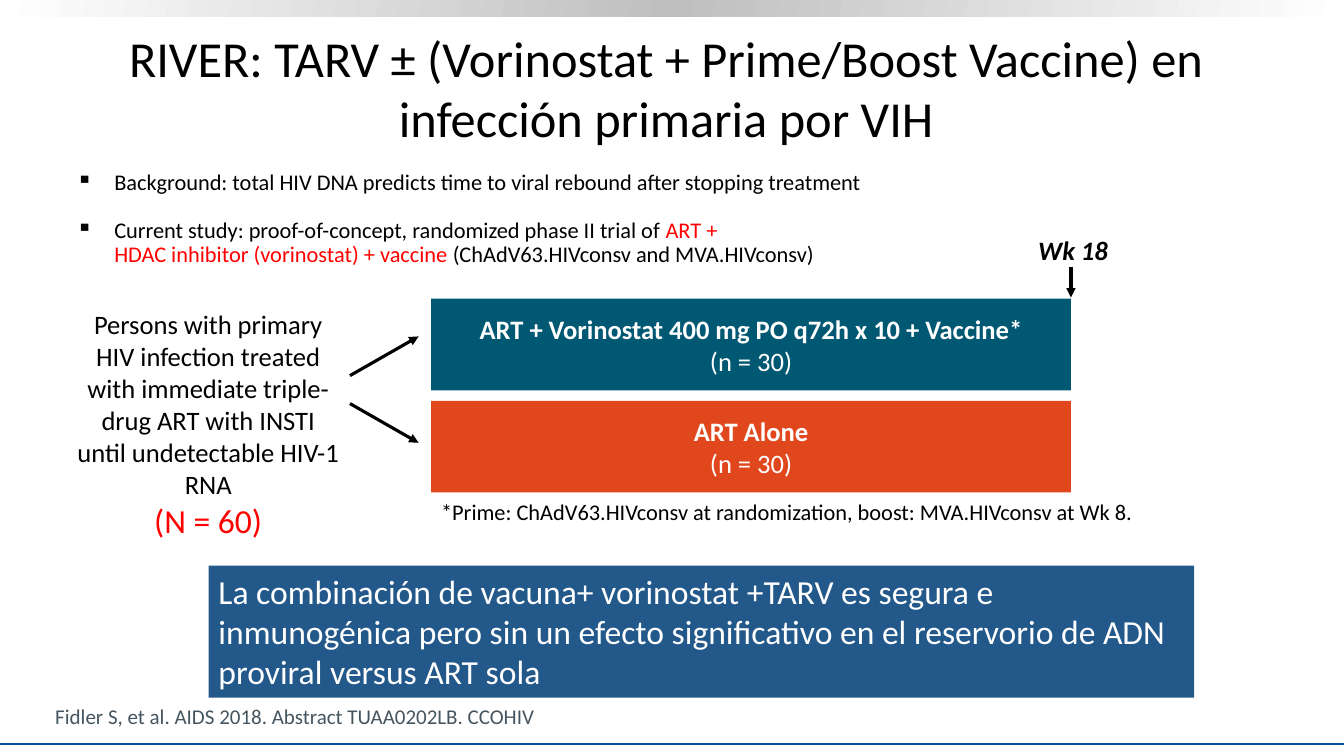
from copy import deepcopy

from lxml.etree import SubElement
from pptx import Presentation
from pptx.dml.color import RGBColor as Rgb
from pptx.enum.shapes import MSO_CONNECTOR as Conn, MSO_SHAPE as Geom
from pptx.enum.text import MSO_ANCHOR as Anchor, PP_ALIGN as Align
from pptx.oxml.ns import qn
from pptx.util import Pt

WIDE, HIGH = 960, 540
HEX = {
    "white": "FFFFFF", "black": "000000", "grey": "BFBFBF", "slate": "455560",
    "rule": "00539B", "teal": "015873", "orange": "E1471D", "blue": "22588A",
    "red": "FF0000",
}


class Deck:
    face = "Calibri"

    def __init__(self):
        self.prs = Presentation()
        self.prs.slide_width, self.prs.slide_height = Pt(WIDE), Pt(HIGH)
        self.slide = self.prs.slides.add_slide(self.prs.slide_layouts[6])

    def color(self, name):
        return Rgb.from_string(HEX[name])

    def rect(self, box, fill=None):
        shape = self.slide.shapes.add_shape(Geom.RECTANGLE, *map(Pt, box))
        shape.shadow.inherit = False
        shape.line.fill.background()
        if fill:
            shape.fill.solid()
            shape.fill.fore_color.rgb = self.color(fill)
        return shape

    def band(self, box, names, angle):
        """Draw a rectangle with a gradient of evenly spaced colours."""
        fill = self.rect(box).fill
        fill.gradient()
        fill.gradient_angle = angle
        stops = fill._fill._gradFill.find(qn("a:gsLst"))
        stops.append(deepcopy(stops[0]))
        for i, (stop, name) in enumerate(zip(fill.gradient_stops, names)):
            stop.position = i / (len(names) - 1)
            stop.color.rgb = self.color(name)

    def line(self, start, end, color="black", width=2.25, arrow=True):
        line = self.slide.shapes.add_connector(
            Conn.STRAIGHT, *map(Pt, start + end))
        line.line.color.rgb = self.color(color)
        line.line.width = Pt(width)
        if arrow:
            SubElement(line.line._get_or_add_ln(), qn("a:tailEnd"),
                       type="triangle")
        SubElement(line._element.spPr, qn("a:effectLst"))

    def text(self, box, paras, fill=None, anchor=Anchor.TOP, wrap=True):
        """Write paragraphs in a text box, or in a rectangle if filled."""
        if fill:
            shape = self.rect(box, fill)
        else:
            shape = self.slide.shapes.add_textbox(*map(Pt, box))
        frame = shape.text_frame
        frame.word_wrap, frame.vertical_anchor = wrap, anchor
        for i, para in enumerate(paras):
            item = frame.paragraphs[0] if i == 0 else frame.add_paragraph()
            self.para(item, **para)
        return frame

    def para(self, item, text, size, color="black", align=Align.LEFT,
             bold=False, italic=False):
        item.alignment = align
        self.font(item.font, size, color, bold, italic)
        if text:
            item.add_run().text = text

    def font(self, font, size, color, bold, italic):
        font.name, font.size = self.face, Pt(size)
        font.bold, font.italic = bold, italic
        font.color.rgb = self.color(color)

    def bullets(self, box, items, size):
        """Write items, each a list of (text, colour) runs; None is a break."""
        frame = self.slide.shapes.add_textbox(*map(Pt, box)).text_frame
        frame.word_wrap = True
        for i, runs in enumerate(items):
            para = frame.paragraphs[0] if i == 0 else frame.add_paragraph()
            para.line_spacing, para.space_after = 0.9, Pt(7)
            if i:
                para.space_before = Pt(10)
            props = para._p.get_or_add_pPr()
            props.set("marL", str(Pt(27)))
            props.set("indent", str(Pt(-27)))
            tint = SubElement(props, qn("a:buClr"))
            SubElement(tint, qn("a:srgbClr"), val=HEX["black"])
            SubElement(props, qn("a:buChar"), char="▪")
            self.para(para, "", size)
            for run in runs:
                if run is None:
                    para.add_line_break()
                    continue
                part = para.add_run()
                part.text = run[0]
                part.font.color.rgb = self.color(run[1])

    def save(self):
        self.prs.save("out.pptx")


def main():
    deck = Deck()
    mid = Align.CENTER

    deck.band((0, 0, WIDE, 11.5), ("white", "grey", "white"), 350)
    deck.line((0, 531.5), (WIDE, 531.5), "rule", 1.5, arrow=False)
    deck.text((48, 18.7, 856, 87), [dict(
        text="RIVER: TARV ± (Vorinostat + Prime/Boost Vaccine) en "
             "infección primaria por VIH", size=36, align=mid)],
        anchor=Anchor.MIDDLE)

    deck.bullets((47.5, 118.8, 857, 80), [
        [("Background: total HIV DNA predicts time to viral rebound "
          "after stopping treatment", "black")],
        [("Current study: proof-of-concept, randomized phase II trial of ",
          "black"),
         ("ART + ", "red"), None,
         ("HDAC inhibitor (vorinostat) + vaccine ", "red"),
         ("(ChAdV63.HIVconsv and MVA.HIVconsv)", "black")],
    ], 16)

    deck.text((47.5, 216.7, 202.5, 174), [
        dict(text="Persons with primary HIV infection treated with immediate "
                  "triple-drug ART with INSTI until undetectable HIV-1 RNA",
             size=19, align=mid),
        dict(text="(N = 60)", size=24, color="red", align=mid)])

    arms = [("ART + Vorinostat 400 mg PO q72h x 10 + Vaccine*", "teal"),
            ("ART Alone", "orange")]
    left, top, width, height, step = 308, 213.3, 457, 65.5, 73
    for i, (name, fill) in enumerate(arms):
        deck.text((left, top + i * step, width, height), [
            dict(text=name, size=19, color="white", align=mid, bold=True),
            dict(text="(n = 30)", size=19, color="white", align=mid)],
            fill, Anchor.MIDDLE)

    fork = 278.3
    for side in (1, -1):
        deck.line((250, fork + 10 * side), (299, fork + 38 * side))
    deck.line((left + width, 191), (left + width, 212.5))

    deck.text((734.5, 163.4, 65, 30), [
        dict(text="Wk 18", size=19, bold=True, italic=True)], wrap=False)
    deck.text((left, 352.3, 564.5, 26.6), [
        dict(text="*Prime: ChAdV63.HIVconsv at randomization, boost: "
                  "MVA.HIVconsv at Wk 8.", size=16)])
    deck.text((32.4, 499, 631, 25.2), [
        dict(text="Fidler S, et al. AIDS 2018. Abstract TUAA0202LB. CCOHIV",
             size=15, color="slate")], anchor=Anchor.BOTTOM)
    deck.text((149, 404, 704, 94.3), [
        dict(text="La combinación de vacuna+ vorinostat +TARV es segura e "
                  "inmunogénica pero sin un efecto significativo en el "
                  "reservorio de ADN proviral versus ART sola",
             size=24, color="white")], "blue")
    deck.save()


if __name__ == "__main__":
    main()
